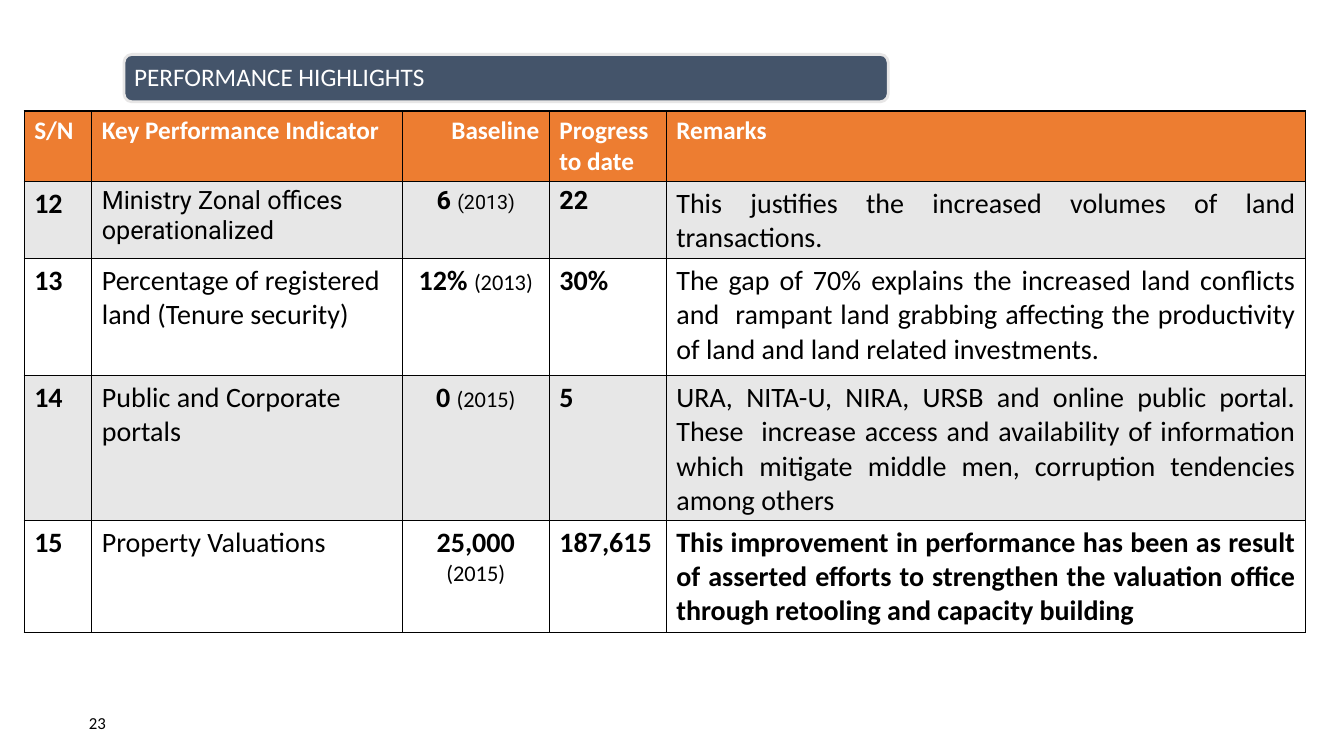
from lxml.etree import SubElement as Sub
from pptx import Presentation
from pptx.dml.color import RGBColor as RGB
from pptx.enum.shapes import MSO_SHAPE as Shape
from pptx.enum.text import MSO_ANCHOR as Anchor, PP_ALIGN as Align
from pptx.oxml.ns import qn
from pptx.util import Inches, Pt

WHITE = RGB(0xFF, 0xFF, 0xFF)
BLACK = RGB(0, 0, 0)
NAVY = RGB(0x44, 0x54, 0x6A)
PALE = RGB(0xE7, 0xE6, 0xE6)
ORANGE = RGB(0xED, 0x7D, 0x31)
GREY = RGB(0xE7, 0xE7, 0xE7)

# Widths and heights are percentages of the slide's size.
COLS = [5.03, 23.1, 10.95, 8.7, 47.56]
ROWS = [8.8, 9.07, 15.47, 18.13, 14.8]
ALIGNS = [Align.LEFT, Align.LEFT, Align.CENTER, Align.LEFT, Align.JUSTIFY]

HEAD = ["S/N", "Key Performance Indicator", "Baseline", "Progress to date", "Remarks"]
DATA = [
    ("12", "Ministry Zonal offices operationalized", ("6 ", "(2013)"), "22",
     "This justifies the increased volumes of land transactions."),
    ("13", "Percentage of registered land (Tenure security)", ("12% ", "(2013)"), "30%",
     "The gap of 70% explains the increased land conflicts and  rampant land grabbing "
     "affecting the productivity of land and land related investments."),
    ("14", "Public and Corporate portals", ("0 ", "(2015)"), "5",
     "URA, NITA-U, NIRA, URSB and online public portal. These  increase access and "
     "availability of information which mitigate middle men, corruption tendencies "
     "among others"),
    ("15", "Property Valuations", ("25,000 ", "(2015)"), "187,615",
     "This improvement in performance has been as result of asserted efforts to "
     "strengthen the valuation office through retooling and capacity building"),
]


class Deck:
    def __init__(self):
        self.prs = Presentation()
        self.prs.slide_width, self.prs.slide_height = Inches(13.33), Inches(7.5)
        self.slide = self.prs.slides.add_slide(self.prs.slide_layouts[6])
        self.base = {"name": "Calibri", "size": Pt(20), "bold": False}

    def wide(self, share):
        return int(self.prs.slide_width * share / 100)

    def high(self, share):
        return int(self.prs.slide_height * share / 100)

    def place(self, x, y, w, h):
        return self.wide(x), self.high(y), self.wide(w), self.high(h)

    def words(self, para, text, color=BLACK, **form):
        """Add a run in the base style, changed by the given format values."""
        run = para.add_run()
        run.text = text
        for key, value in {**self.base, **form}.items():
            setattr(run.font, key, value)
        run.font.color.rgb = color

    def bar(self, *box):
        bar = self.slide.shapes.add_shape(Shape.ROUNDED_RECTANGLE, *self.place(*box))
        bar.shadow.inherit = False
        bar.fill.solid()
        bar.fill.fore_color.rgb = NAVY
        bar.line.color.rgb = PALE
        bar.line.width = Pt(2)

    def label(self, text, *box, pad=0, align=Align.LEFT, space=1.0, **form):
        frame = self.slide.shapes.add_textbox(*self.place(*box)).text_frame
        look = {"word_wrap": True, "vertical_anchor": Anchor.MIDDLE}
        look |= {f"margin_{side}": Inches(pad) for side in ("left", "top", "right", "bottom")}
        for key, value in look.items():
            setattr(frame, key, value)
        para = frame.paragraphs[0]
        para.alignment, para.line_spacing = align, space
        self.words(para, text, **form)

    def table(self, x, y, cols, rows):
        box = self.place(x, y, sum(cols), sum(rows))
        grid = self.slide.shapes.add_table(len(rows), len(cols), *box).table
        for col, share in zip(grid.columns, cols):
            col.width = self.wide(share)
        for row, share in zip(grid.rows, rows):
            row.height = self.high(share)
        return grid

    def cell(self, cell, fill, align):
        """Border, fill and align a cell, and return its paragraph."""
        for side in ("lnL", "lnR", "lnT", "lnB"):
            line = Sub(cell._tc.get_or_add_tcPr(), qn(f"a:{side}"), w=str(Pt(1)))
            Sub(Sub(line, qn("a:solidFill")), qn("a:srgbClr"), val=str(BLACK))
        cell.fill.solid()
        cell.fill.fore_color.rgb = fill
        para = cell.text_frame.paragraphs[0]
        para.alignment = align
        return para


def main():
    deck = Deck()
    deck.bar(9.23, 7.2, 56.86, 6.27)
    deck.label("PERFORMANCE HIGHLIGHTS", 9.45, 7.47, 56.56, 5.73,
               pad=0.07, space=0.9, size=Pt(18), color=WHITE)

    grid = deck.table(1.8, 14.67, COLS, ROWS)
    for c, text in enumerate(HEAD):
        align = Align.RIGHT if text == "Baseline" else Align.LEFT
        para = deck.cell(grid.cell(0, c), ORANGE, align)
        deck.words(para, text, WHITE, size=Pt(18), bold=True)

    for r, row in enumerate(DATA, 1):
        first, last = r == 1, r == len(DATA)
        small = {"name": "Roboto", "size": Pt(18)} if first else {}
        for c, text in enumerate(row):
            para = deck.cell(grid.cell(r, c), GREY if r % 2 else WHITE, ALIGNS[c])
            form = small if c in (1, 2, 3) else {}
            if c == 2:
                count, year = text
                deck.words(para, count, **form, bold=True)
                deck.words(para, year, **{**form, "size": Pt(14 if first else 16)})
            else:
                deck.words(para, text, **form, bold=c in (0, 3) or (last and c == 4))

    deck.label("23", 2.33, 94.27, 5.55, 2.67, align=Align.RIGHT, size=Pt(12))
    deck.prs.save("out.pptx")


if __name__ == "__main__":
    main()
